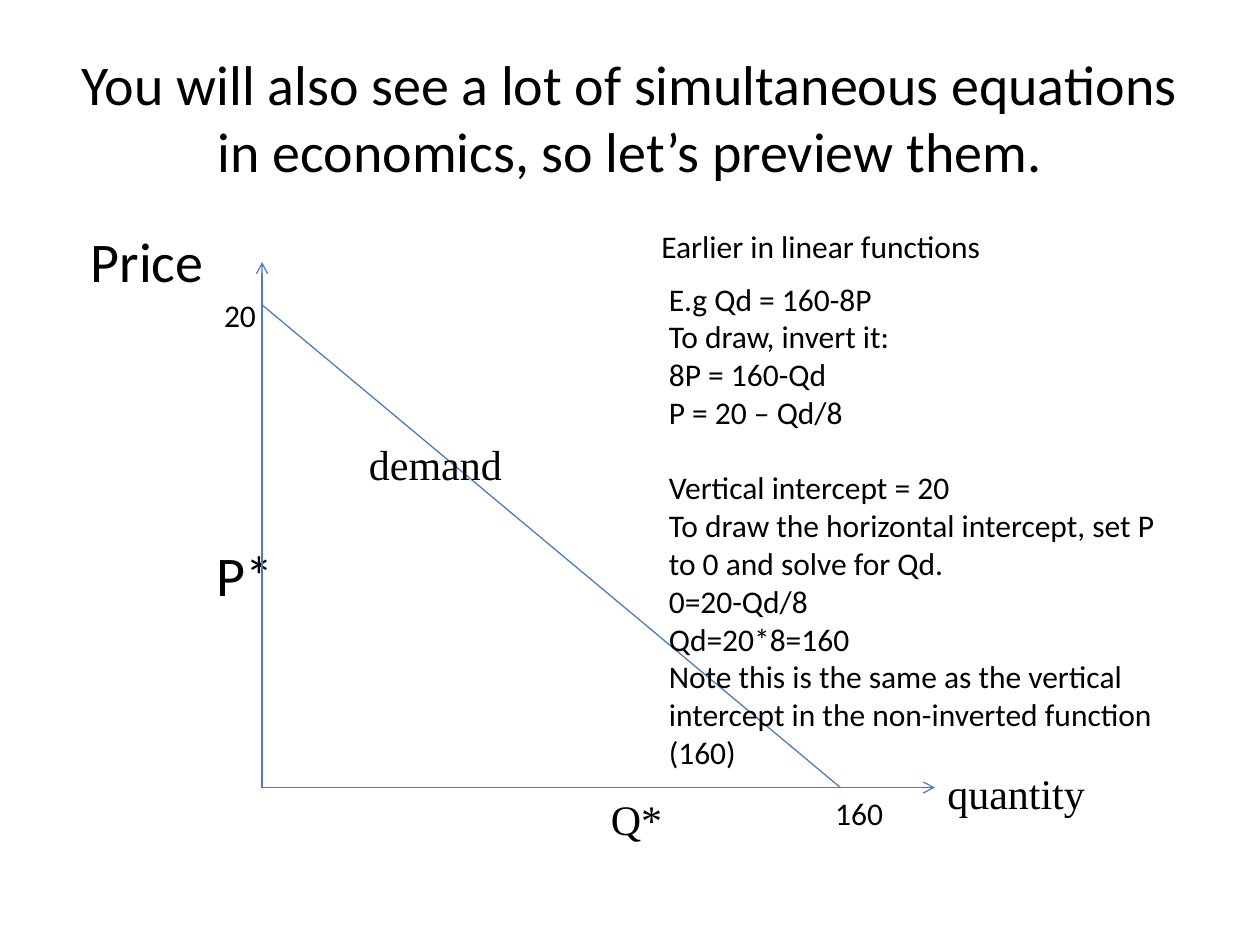
from lxml.etree import SubElement
from pptx import Presentation
from pptx.dml.color import RGBColor
from pptx.enum.shapes import MSO_CONNECTOR
from pptx.enum.text import MSO_ANCHOR, MSO_AUTO_SIZE, PP_ALIGN
from pptx.oxml.ns import qn
from pptx.util import Inches, Pt

INK, LINE_BLUE = "000000", "4B7EBC"
SANS, SERIF = "Calibri", "Times New Roman"
INDENT = 0.12

# Corners of the graph, in inches
AXIS_X, AXIS_Y = 2.08, 6.25
QUANTITY_END, PRICE_END = 7.42, 2.08
QUANTITY_INTERCEPT, PRICE_INTERCEPT = 6.67, 2.42

NOTES = [
    "E.g Qd = 160-8P",
    "To draw, invert it:",
    "8P = 160-Qd",
    "P = 20 – Qd/8",
    "Vertical intercept = 20",
    "To draw the horizontal intercept, set P to 0 and solve for Qd.",
    "0=20-Qd/8",
    "Qd=20*8=160",
    "Note this is the same as the vertical intercept in the non-inverted function (160)",
]


def colour(hex_value):
    return RGBColor.from_string(hex_value)


def place(shape, left, top, width, height):
    shape.left, shape.top = Inches(left), Inches(top)
    shape.width, shape.height = Inches(width), Inches(height)


def write(frame, lines, size, font=SANS, indent=0):
    """Fill a text frame, one paragraph per line, in one style."""
    frame.text = "\n".join(lines)
    for paragraph in frame.paragraphs:
        set_indent(paragraph, indent)
        for run in paragraph.runs:
            run.font.size = Pt(size)
            run.font.name = font
            run.font.color.rgb = colour(INK)


def set_indent(paragraph, indent):
    properties = paragraph._p.get_or_add_pPr()
    properties.set("marL", str(Inches(indent)))
    properties.set("indent", "0")


def add_label(slide, lines, box, size=18, font=SANS, indent=0, wrap=False):
    label = slide.shapes.add_textbox(*map(Inches, box))
    frame = label.text_frame
    write(frame, lines, size, font, indent)
    frame.word_wrap = wrap
    frame.auto_size = MSO_AUTO_SIZE.SHAPE_TO_FIT_TEXT
    return frame


def add_line(slide, start, end, arrow=False):
    line = slide.shapes.add_connector(
        MSO_CONNECTOR.STRAIGHT, *map(Inches, start + end))
    line.line.color.rgb = colour(LINE_BLUE)
    line.line.width = Pt(0.75)
    if arrow:
        SubElement(line.line._get_or_add_ln(), qn("a:tailEnd"), type="arrow")
    SubElement(line._element.spPr, qn("a:effectLst"))


def add_title(slide):
    title = slide.shapes.title
    place(title, 0.5, 0.3, 9, 1.25)
    write(title.text_frame, ["You will also see a lot of simultaneous equations "
                             "in economics, so let’s preview them."], 32)
    title.text_frame.vertical_anchor = MSO_ANCHOR.MIDDLE
    title.text_frame.paragraphs[0].alignment = PP_ALIGN.CENTER


def add_price_labels(slide):
    body = slide.placeholders[1]
    place(body, 0.5, 1.75, 9, 4.95)
    write(body.text_frame, ["Price", "P*"], 32, indent=INDENT)
    price, equilibrium = body.text_frame.paragraphs
    set_indent(equilibrium, INDENT + 1)
    equilibrium.space_before = Pt(141)
    for paragraph in (price, equilibrium):
        SubElement(paragraph._p.get_or_add_pPr(), qn("a:buNone"))


def add_graph(slide):
    origin = (AXIS_X, AXIS_Y)
    add_line(slide, origin, (QUANTITY_END, AXIS_Y), arrow=True)
    add_line(slide, origin, (AXIS_X, PRICE_END), arrow=True)
    # Demand curve
    add_line(slide, (AXIS_X, PRICE_INTERCEPT), (QUANTITY_INTERCEPT, AXIS_Y))
    # Names on the graph
    add_label(slide, ["demand"], (2.83, 3.43, 1.67, 0.5), 24, SERIF, wrap=True)
    add_label(slide, ["quantity"], (QUANTITY_END, 6.04, 1.3, 0.51), 24, SERIF)
    add_label(slide, ["Q*"], (4.75, AXIS_Y, 1.08, 0.5), 24, SERIF, wrap=True)
    # Intercept values
    add_label(slide, ["20"], (1.5, 2.3, 0.64, 0.4), indent=0.18)
    add_label(slide, ["160"], (6.35, AXIS_Y, 0.77, 0.4), indent=0.18)


def add_notes_column(slide):
    add_label(slide, ["Earlier in linear functions"],
              (5.03, 1.75, 2.89, 0.4), indent=INDENT)
    steps = add_label(slide, NOTES, (5.21, 2.17, 4.21, 4.04), wrap=True)
    # The intercepts start a second group
    steps.paragraphs[4].space_before = Pt(21.5)


def main():
    deck = Presentation()
    deck.slide_width, deck.slide_height = Inches(10), Inches(7.5)
    slide = deck.slides.add_slide(deck.slide_layouts[1])
    add_title(slide)
    add_price_labels(slide)
    add_graph(slide)
    add_notes_column(slide)
    deck.save("out.pptx")


if __name__ == "__main__":
    main()
